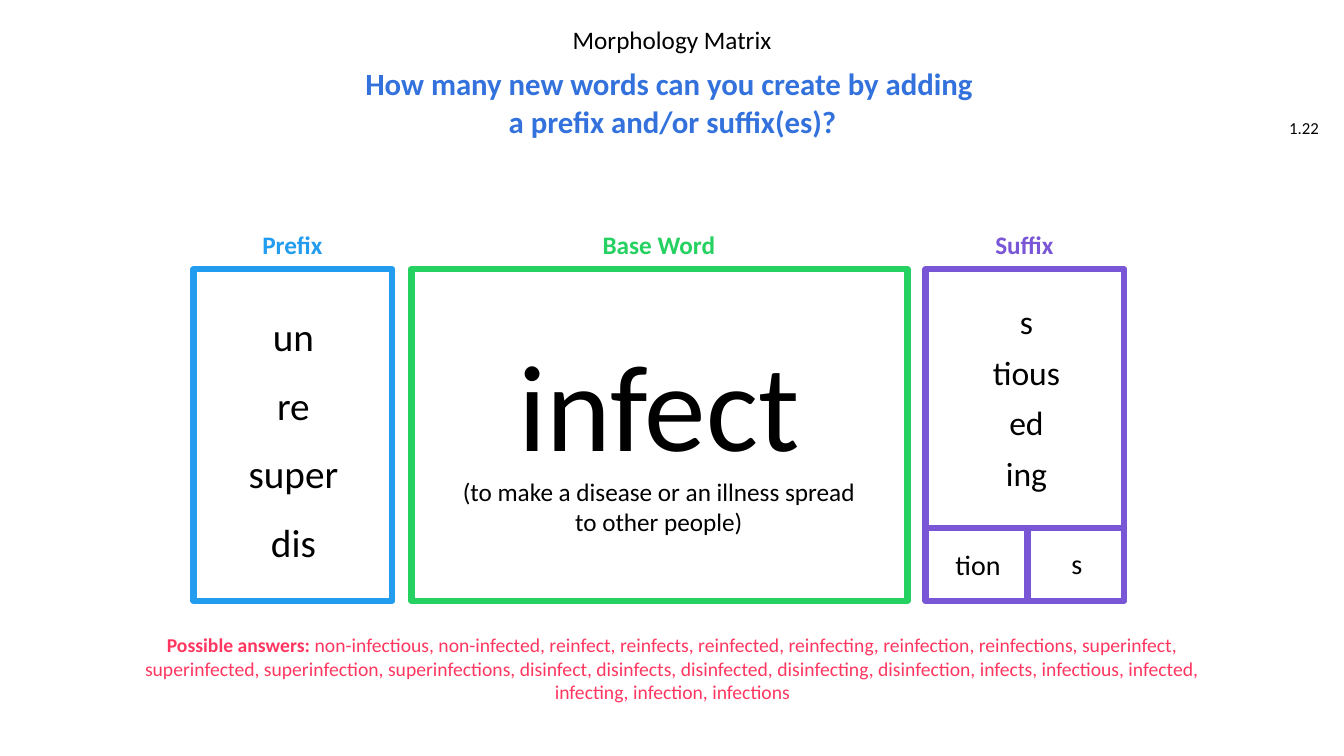
"""Build a morphology matrix slide for the base word "infect"."""
from dataclasses import dataclass

from lxml import etree
from pptx import Presentation
from pptx.dml.color import RGBColor
from pptx.enum.shapes import MSO_CONNECTOR as Connector, MSO_SHAPE as Preset
from pptx.enum.text import MSO_ANCHOR as Anchor, PP_ALIGN as Align
from pptx.oxml.ns import qn
from pptx.util import Emu, Pt

EMU_PER_PX = 9144
FONT = "Calibri"
BLACK = RGBColor(0x00, 0x00, 0x00)
QUESTION_BLUE = RGBColor(0x33, 0x72, 0xDC)
PREFIX_BLUE = RGBColor(0x21, 0x9C, 0xEE)
BASE_GREEN = RGBColor(0x25, 0xD1, 0x60)
SUFFIX_PURPLE = RGBColor(0x79, 0x56, 0xD6)
ANSWER_PINK = RGBColor(0xFF, 0x37, 0x60)

PANEL_TOP, PANEL_HEIGHT = 267, 329
HEADING_TOP, HEADING_HEIGHT = 223, 40
DIVIDER_TOP = 524
AFFIX_WIDTH = 132
ANSWERS = (
    " non-infectious, non-infected, reinfect, reinfects, reinfected, reinfecting, "
    "reinfection, reinfections, superinfect, superinfected, superinfection, "
    "superinfections, disinfect, disinfects, disinfected, disinfecting, disinfection, "
    "infects, infectious, infected, infecting, infection, infections"
)


@dataclass(frozen=True)
class Run:
    text: str
    size: int
    color: RGBColor = BLACK
    bold: bool = False


@dataclass(frozen=True)
class Box:
    left: int
    top: int
    width: int
    height: int


@dataclass(frozen=True)
class Panel:
    heading: str
    heading_width: int
    left: int
    width: int
    color: RGBColor


@dataclass(frozen=True)
class AffixList:
    affixes: tuple[str, ...]
    left: int
    top: int
    step: int
    height: int
    size: int


PANELS = (
    Panel("Prefix", 84, 192, 197, PREFIX_BLUE),
    Panel("Base Word", 139, 408, 492, BASE_GREEN),
    Panel("Suffix", 86, 918, 197, SUFFIX_PURPLE),
)
AFFIX_LISTS = (
    AffixList(("un", "re", "super", "dis"), 225, 305, 68, 57, 28),
    AffixList(("s", "tious", "ed", "ing"), 952, 294, 50, 50, 24),
    AffixList(("tion",), 904, 538, 0, 44, 20),
    AffixList(("s",), 1002, 537, 0, 44, 20),
)


def px(length: int) -> Emu:
    """Convert px to EMU."""
    return Emu(length * EMU_PER_PX)


def place(shape, box: Box) -> None:
    """Give a shape its position and size."""
    shape.left, shape.top = px(box.left), px(box.top)
    shape.width, shape.height = px(box.width), px(box.height)


def add_run(paragraph, run: Run) -> None:
    """Append one formatted run to a paragraph."""
    text_run = paragraph.add_run()
    text_run.text = run.text
    font = text_run.font
    font.name, font.size, font.bold = FONT, Pt(run.size), run.bold
    font.color.rgb = run.color


def fill_text(frame, lines: list[list[Run]], align: Align = Align.CENTER,
              anchor: Anchor = Anchor.TOP, spacing: Pt | float | None = None) -> None:
    """Write paragraphs of runs into a text frame."""
    frame.word_wrap = True
    frame.vertical_anchor = anchor
    for index, runs in enumerate(lines):
        paragraph = frame.add_paragraph() if index else frame.paragraphs[0]
        paragraph.alignment = align
        if spacing is not None:
            paragraph.line_spacing = spacing
        for run in runs:
            add_run(paragraph, run)


def add_text(slide, box: Box, lines: list[list[Run]], align: Align = Align.CENTER,
             anchor: Anchor = Anchor.TOP, spacing: Pt | float | None = None):
    """Add a text box and return its text frame."""
    shape = slide.shapes.add_textbox(0, 0, 0, 0)
    place(shape, box)
    fill_text(shape.text_frame, lines, align, anchor, spacing)
    return shape.text_frame


def add_panel(slide, panel: Panel) -> None:
    """Draw a bordered panel with its centred heading."""
    heading_left = panel.left + (panel.width - panel.heading_width) // 2
    heading = add_text(
        slide, Box(heading_left, HEADING_TOP, panel.heading_width, HEADING_HEIGHT),
        [[Run(panel.heading, 18, panel.color, True)]])
    heading.word_wrap = False
    border = slide.shapes.add_shape(Preset.RECTANGLE, 0, 0, 0, 0)
    place(border, Box(panel.left, PANEL_TOP, panel.width, PANEL_HEIGHT))
    border.shadow.inherit = False
    border.fill.background()
    border.line.color.rgb = panel.color
    border.line.width = Pt(4.5)


def add_divider(slide, start: tuple[int, int], end: tuple[int, int]) -> None:
    """Draw a purple line inside the suffix panel."""
    divider = slide.shapes.add_connector(Connector.STRAIGHT, *map(px, start + end))
    divider.line.color.rgb = SUFFIX_PURPLE
    divider.line.width = Pt(4.5)
    etree.SubElement(divider._element.spPr, qn("a:effectLst"))


def add_affixes(slide, affix_list: AffixList) -> None:
    """Stack affixes at equal steps."""
    for index, affix in enumerate(affix_list.affixes):
        top = affix_list.top + index * affix_list.step
        add_text(slide, Box(affix_list.left, top, AFFIX_WIDTH, affix_list.height),
                 [[Run(affix, affix_list.size)]])


def add_base_word(slide) -> None:
    """Write the base word and its two-line meaning."""
    frame = add_text(slide, Box(428, 321, 451, 219), [
        [Run("infect", 88)],
        [Run("(to make a disease or an illness spread", 18)],
    ])
    meaning = frame.paragraphs[-1]
    meaning.add_line_break()
    add_run(meaning, Run("to other people)", 18))


def main() -> None:
    """Build and save the slide."""
    presentation = Presentation()
    presentation.slide_width, presentation.slide_height = px(1333), px(750)
    slide = presentation.slides.add_slide(presentation.slide_layouts[5])
    title = slide.shapes.title
    place(title, Box(197, 60, 940, 82))
    fill_text(title.text_frame, [
        [Run("How many new words can you create by adding ", 22, QUESTION_BLUE, True)],
        [Run("a prefix and/or suffix(es)?", 22, QUESTION_BLUE, True)],
    ], anchor=Anchor.MIDDLE, spacing=Pt(27))
    add_text(slide, Box(382, 23, 569, 35), [[Run("Morphology Matrix", 18)]], spacing=0.9)
    add_text(slide, Box(1255, 107, 63, 40), [[Run("1.22", 12)]],
             align=Align.RIGHT, anchor=Anchor.MIDDLE)
    for panel in PANELS:
        add_panel(slide, panel)
    suffix = PANELS[-1]
    add_divider(slide, (suffix.left, DIVIDER_TOP), (suffix.left + suffix.width, DIVIDER_TOP))
    add_divider(slide, (1019, DIVIDER_TOP), (1019, PANEL_TOP + PANEL_HEIGHT))
    add_base_word(slide)
    for affix_list in AFFIX_LISTS:
        add_affixes(slide, affix_list)
    add_text(slide, Box(106, 623, 1122, 81), [[
        Run("Possible answers:", 14, ANSWER_PINK, True),
        Run(ANSWERS, 14, ANSWER_PINK),
    ]])
    presentation.save("out.pptx")


if __name__ == "__main__":
    main()
